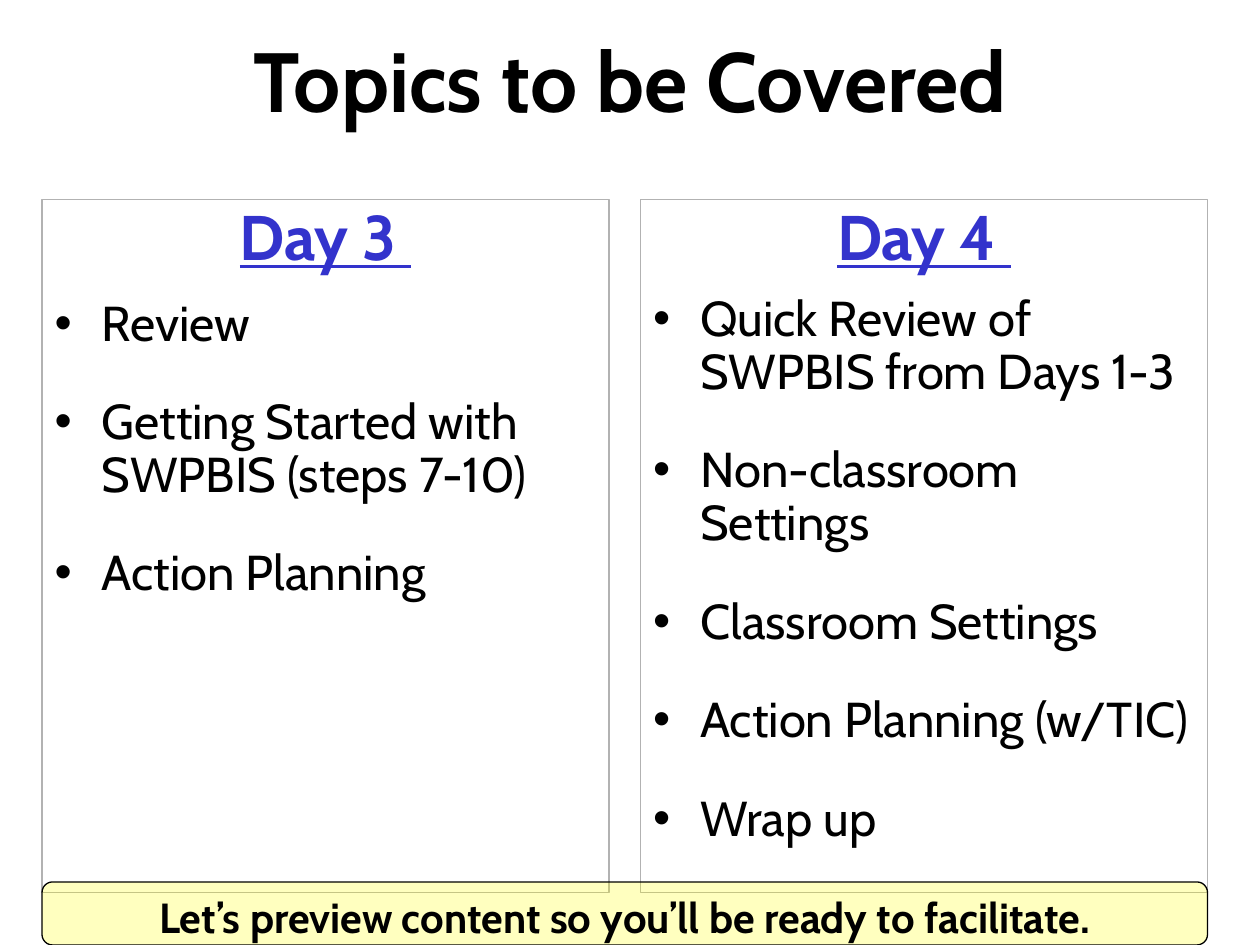
from pptx import Presentation
from pptx.dml.color import RGBColor
from pptx.enum.shapes import MSO_SHAPE
from pptx.enum.text import MSO_ANCHOR, MSO_AUTO_SIZE, PP_ALIGN
from pptx.oxml.ns import qn
from pptx.util import Pt
from lxml.etree import SubElement

COLORS = {"ink": "000000", "head": "3333CC", "edge": "B2B2B2", "note": "FFFF00"}
LEFT, TOP, WIDTH, HEIGHT, STEP = 24, 114, 324, 396, 342

TOPICS = [
    ("Day 3 ", 8.6, [
        "Review",
        "Getting Started with SWPBIS (steps 7-10)",
        "Action Planning",
    ]),
    ("Day 4 ", 6, [
        "Quick Review of SWPBIS from Days 1-3",
        "Non-classroom Settings",
        "Classroom Settings",
        "Action Planning (w/TIC)",
        "Wrap up",
    ]),
]


def color(name):
    return RGBColor.from_string(COLORS[name])


def apply(target, values):
    for name, value in values.items():
        setattr(target, name, value)


class Deck:
    font = "Cabin"

    def __init__(self, show):
        self.slide = show.slides.add_slide(show.slide_layouts[3])

    def place(self, shape, left, top, width, height):
        apply(shape, {"left": Pt(left), "top": Pt(top),
                      "width": Pt(width), "height": Pt(height)})

    def frame(self, shape, anchor):
        apply(shape.text_frame, {"word_wrap": True, "vertical_anchor": anchor,
                                 "auto_size": MSO_AUTO_SIZE.NONE})
        return shape.text_frame

    def outline(self, shape, name):
        shape.line.color.rgb = color(name)
        shape.line.width = Pt(0.75)

    def label(self, para, text, size, tint="ink", form=None, **font):
        para.text = text
        apply(para, form or {})
        apply(para.font, {"name": self.font, "size": Pt(size), **font})
        para.font.color.rgb = color(tint)

    def bullet(self, para, char=None):
        """Set a hanging bullet, or none when no character is given."""
        props = para._p.get_or_add_pPr()
        indent = Pt(27) if char else 0
        props.set("marL", str(indent))
        props.set("indent", str(-indent))
        if char:
            SubElement(props, qn("a:buChar"), char=char)
        else:
            SubElement(props, qn("a:buNone"))

    def title(self, text):
        shape = self.slide.shapes.title
        self.place(shape, 0, 0, 720, 90)
        frame = self.frame(shape, MSO_ANCHOR.MIDDLE)
        self.label(frame.paragraphs[0], text, 48, bold=True,
                   form={"alignment": PP_ALIGN.CENTER})

    def column(self, index, head, gap, items):
        shape = self.slide.placeholders[index + 1]
        self.place(shape, LEFT + index * STEP, TOP, WIDTH, HEIGHT)
        self.outline(shape, "edge")
        frame = self.frame(shape, MSO_ANCHOR.TOP)
        first = frame.paragraphs[0]
        self.bullet(first)
        self.label(first, head, 36, "head", bold=True, underline=True,
                   form={"alignment": PP_ALIGN.CENTER, "line_spacing": 0.9,
                         "space_before": Pt(0), "space_after": Pt(gap)})
        for item in items:
            para = frame.add_paragraph()
            self.bullet(para, "•")
            self.label(para, item, 28,
                       form={"line_spacing": 0.9, "space_before": Pt(5.6),
                             "space_after": Pt(20.4)})

    def banner(self, text):
        shape = self.slide.shapes.add_shape(
            MSO_SHAPE.ROUNDED_RECTANGLE, Pt(LEFT), Pt(504), Pt(STEP + WIDTH), Pt(36))
        shape.shadow.inherit = False
        shape.fill.solid()
        shape.fill.fore_color.rgb = color("note")
        tint = shape.fill._xPr.find(qn("a:solidFill"))[0]
        SubElement(tint, qn("a:alpha"), val="25000")
        self.outline(shape, "ink")
        frame = self.frame(shape, MSO_ANCHOR.TOP)
        self.label(frame.paragraphs[0], text, 24, bold=True,
                   form={"alignment": PP_ALIGN.CENTER})


def main():
    show = Presentation()
    apply(show, {"slide_width": Pt(720), "slide_height": Pt(540)})
    deck = Deck(show)
    deck.title("Topics to be Covered")
    for index, topic in enumerate(TOPICS):
        deck.column(index, *topic)
    deck.banner("Let’s preview content so you’ll be ready to facilitate.")
    show.save("out.pptx")


if __name__ == "__main__":
    main()
